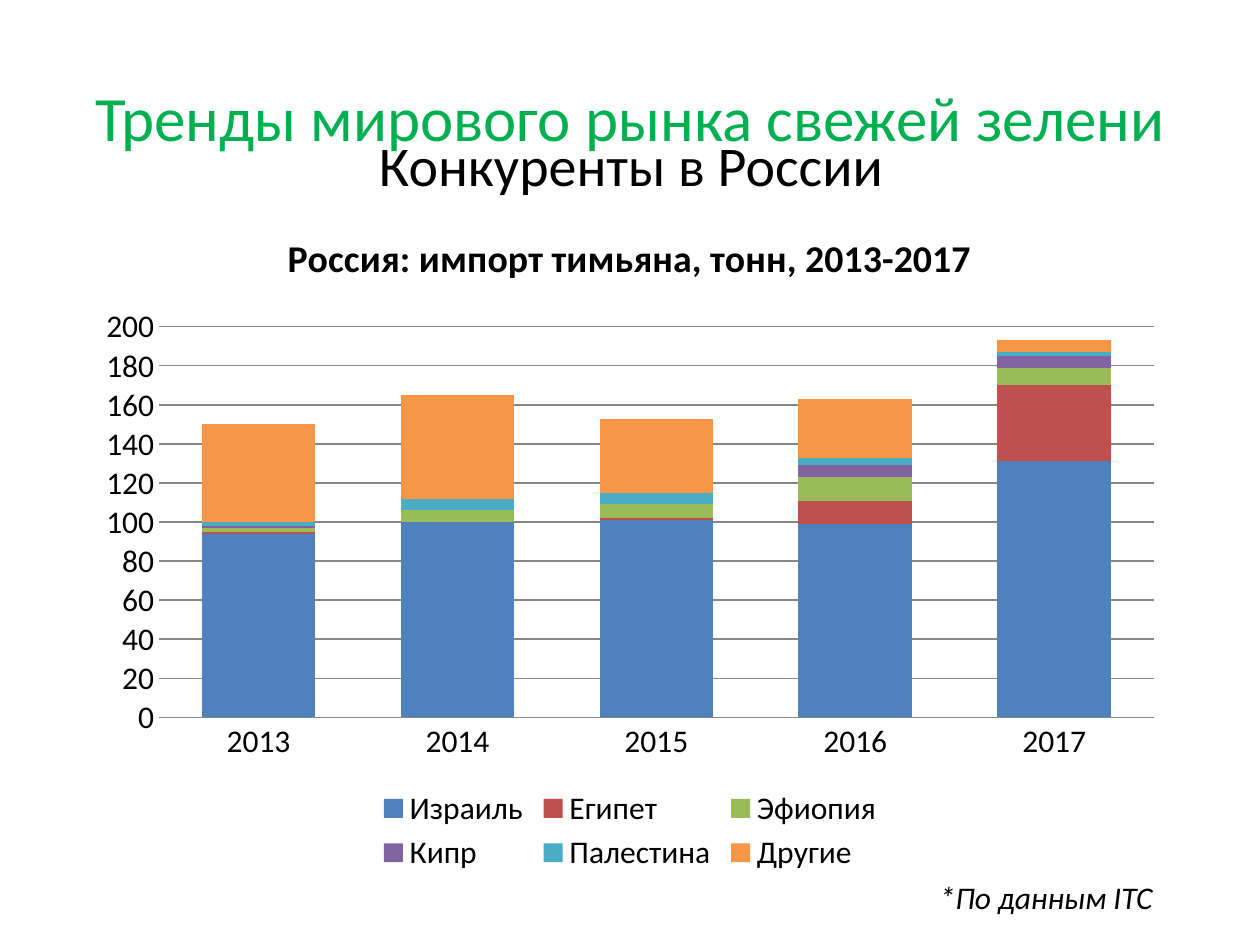
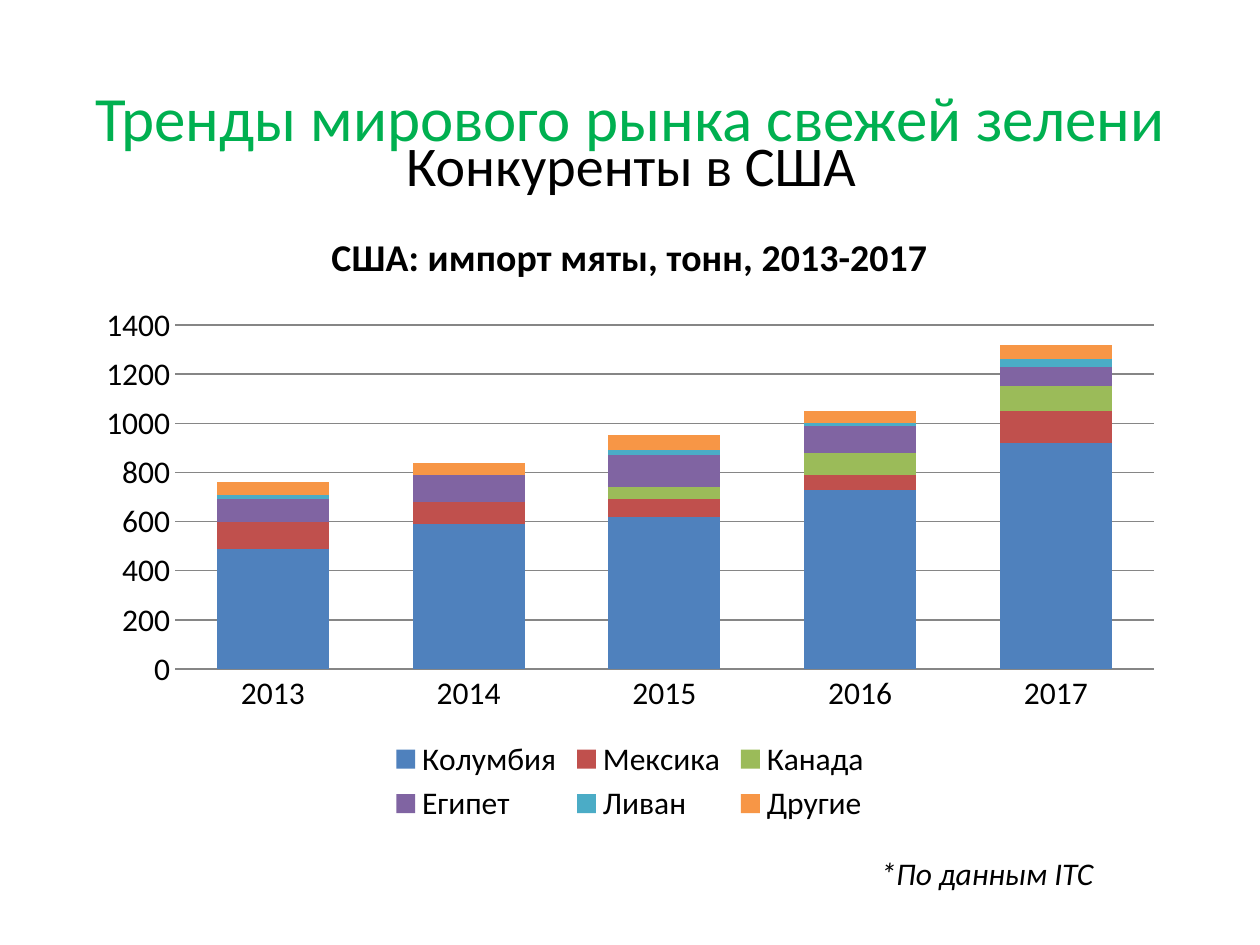
import pptx
import pptx.chart.data
import pptx.dml.color
import pptx.enum.chart
import pptx.enum.text
import pptx.util

PX = 9144
FONT = "Calibri"
GREEN, BLACK, GRAY = "00B050", "000000", "868686"
SERIES_COLORS = ["4F81BD", "C0504D", "9BBB59", "8064A2", "4BACC6", "F79646"]
YEARS = ["2013", "2014", "2015", "2016", "2017"]
TITLE = "Тренды мирового рынка свежей зелени"
SOURCE = "*По данным ITC"

RUSSIA_THYME = {
    "Израиль": [94, 100, 101, 99, 131],
    "Египет": [1, 0, 1, 12, 39],
    "Эфиопия": [2, 6, 7, 12, 9],
    "Кипр": [1, 0, 0, 6, 6],
    "Палестина": [2, 6, 6, 4, 2],
    "Другие": [50, 53, 38, 30, 6],
}
USA_MINT = {
    "Колумбия": [490, 590, 620, 730, 920],
    "Мексика": [110, 90, 70, 60, 130],
    "Канада": [0, 0, 50, 90, 100],
    "Египет": [90, 110, 130, 110, 80],
    "Ливан": [20, 0, 20, 10, 30],
    "Другие": [50, 50, 60, 50, 60],
}


def rgb(color):
    """Turn a hex string into an RGB colour."""
    return pptx.dml.color.RGBColor.from_string(color)


def box(*lengths):
    """Turn px lengths into EMU."""
    return [pptx.util.Emu(n * PX) for n in lengths]


def set_font(font, size, color=BLACK, bold=False, italic=False):
    """Apply the shared typeface with the given format."""
    font.name = FONT
    font.size = pptx.util.Pt(size)
    font.color.rgb = rgb(color)
    font.bold = bold
    font.italic = italic


def add_text(slide, text, at, align="LEFT", anchor="TOP", wrap=True, **style):
    """Add a one-paragraph text box."""
    tf = slide.shapes.add_textbox(*box(*at)).text_frame
    tf.word_wrap = wrap
    tf.vertical_anchor = getattr(pptx.enum.text.MSO_ANCHOR, anchor)
    p = tf.paragraphs[0]
    p.alignment = getattr(pptx.enum.text.PP_ALIGN, align)
    r = p.add_run()
    r.text = text
    set_font(r.font, **style)


def style_axes(chart, top, step):
    """Set the value scale, the gridlines and the axis lines."""
    none = pptx.enum.chart.XL_TICK_MARK.NONE
    cat, val = chart.category_axis, chart.value_axis
    cat.major_tick_mark = val.major_tick_mark = none
    val.minimum_scale, val.maximum_scale, val.major_unit = 0, top, step
    val.has_major_gridlines = True
    for line in (cat.format.line, val.major_gridlines.format.line):
        line.color.rgb = rgb(GRAY)
        line.width = pptx.util.Pt(0.75)
    val.format.line.fill.background()


def add_import_chart(slide, title, imports, height, top, step):
    """Add a stacked column chart of imports by country of origin."""
    data = pptx.chart.data.CategoryChartData()
    data.categories = YEARS
    for country, tonnes in imports.items():
        data.add_series(country, tonnes)
    kind = pptx.enum.chart.XL_CHART_TYPE.COLUMN_STACKED
    chart = slide.shapes.add_chart(kind, *box(67, 162, 866, height), data).chart
    set_font(chart.font, 18)
    chart.has_title = True
    tf = chart.chart_title.text_frame
    r = tf.paragraphs[0].add_run()
    r.text = title
    set_font(r.font, 21.6, bold=True)
    chart.has_legend = True
    chart.legend.position = pptx.enum.chart.XL_LEGEND_POSITION.BOTTOM
    chart.legend.include_in_layout = False
    style_axes(chart, top, step)
    plot = chart.plots[0]
    plot.gap_width, plot.overlap = 75, 100
    plot.vary_by_categories = False
    for series, color in zip(plot.series, SERIES_COLORS):
        series.format.fill.solid()
        series.format.fill.fore_color.rgb = rgb(color)


def add_market_slide(prs, subtitle, source_at, **chart):
    """Add a slide with the shared title, a market's chart and its source."""
    s = prs.slides.add_slide(prs.slide_layouts[6])
    add_text(s, TITLE, (50, 30, 900, 125), "CENTER", "MIDDLE", size=36, color=GREEN)
    add_text(s, subtitle, (51, 99, 900, 71), "CENTER", size=32)
    add_import_chart(s, **chart)
    add_text(s, SOURCE, (*source_at, 192, 40), wrap=False, size=18, italic=True)


def main():
    """Build and save the presentation."""
    prs = pptx.Presentation()
    prs.slide_width, prs.slide_height = box(1000, 750)
    add_market_slide(prs, "Конкуренты в России", (736, 692),
                     title="Россия: импорт тимьяна, тонн, 2013-2017",
                     imports=RUSSIA_THYME, height=535, top=200, step=20)
    add_market_slide(prs, "Конкуренты в США", (689, 673),
                     title="США: импорт мяты, тонн, 2013-2017",
                     imports=USA_MINT, height=496, top=1400, step=200)
    prs.save("out.pptx")


if __name__ == "__main__":
    main()
